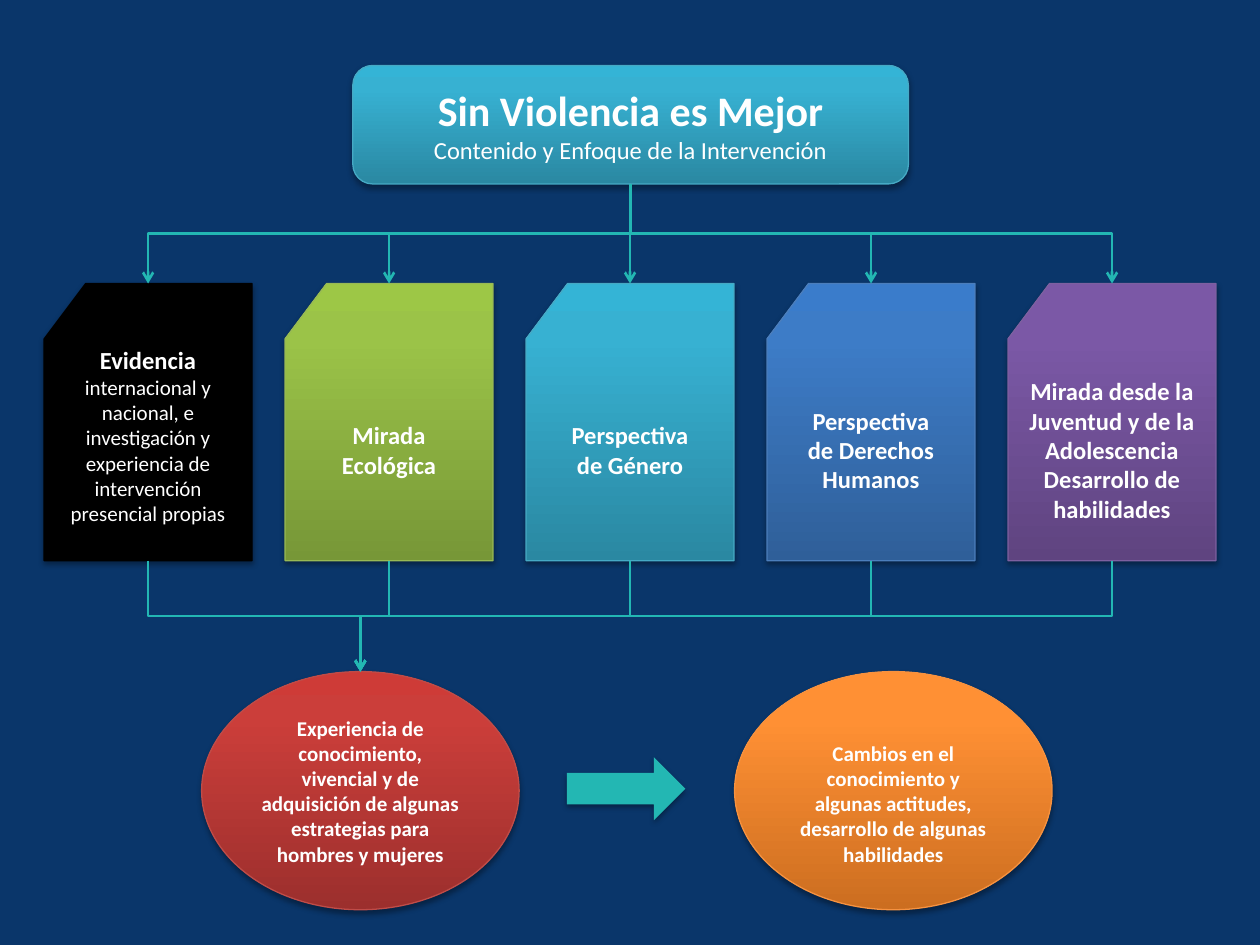
import pptx
import pptx.util
import pptx.dml.color
import pptx.enum.shapes
import pptx.enum.text
import pptx.oxml
import pptx.oxml.ns
import copy

Inches, Pt = pptx.util.Inches, pptx.util.Pt
RGB = pptx.dml.color.RGBColor.from_string
SHAPE = pptx.enum.shapes.MSO_SHAPE
ANCHOR = pptx.enum.text.MSO_ANCHOR
qn = pptx.oxml.ns.qn

# Gradients run from the bottom up: stops at 0, 80 and 100 percent, then the line colour
THEME = {
    "font": "Calibri", "title": 24, "heading": 14, "body": 12,
    "background": "0A366A", "text": "FFFFFF", "accent": "23B7B3",
    "black": ("000000", "000000", "000000", "000000"),
    "green": ("779737", "9BC348", "9DC746", "98B955"),
    "aqua": ("2A88A2", "37B1D2", "34B4D6", "46AAC5"),
    "blue": ("2F5F99", "3D7CC7", "3A7CCB", "4B7EBC"),
    "purple": ("5F4480", "7B58A6", "7C57A8", "7D60A0"),
    "red": ("9C2F2D", "CB3E3A", "CE3B37", "BF4C48"),
    "orange": ("CC6E20", "FF9034", "FF9136", "F69240"),
}
SHADOW = (
    f'<a:effectLst {pptx.oxml.ns.nsdecls("a")}>'
    '<a:outerShdw blurRad="40000" dist="23000" dir="5400000" rotWithShape="0">'
    '<a:srgbClr val="000000"><a:alpha val="35000"/></a:srgbClr>'
    '</a:outerShdw></a:effectLst>'
)


def add_block(kind, left, top, width, height, color, paragraphs):
    """Add a shaded shape; each paragraph is a list of (text, size, bold) runs."""
    shape = slide.shapes.add_shape(
        kind, Inches(left), Inches(top), Inches(width), Inches(height))
    palette = THEME[color]
    if color in ("black", "accent"):
        shape.fill.solid()
        shape.fill.fore_color.rgb = RGB(palette if color == "accent" else palette[0])
    else:
        shape.fill.gradient()
        shape.fill.gradient_angle = 90
        stop_list = shape._element.spPr.find(".//" + qn("a:gsLst"))
        stop_list.append(copy.deepcopy(stop_list[-1]))
        for stop, position, value in zip(shape.fill.gradient_stops, (0, 0.8, 1), palette):
            stop.position = position
            stop.color.rgb = RGB(value)
    if color == "accent":
        shape.line.fill.background()
    else:
        shape.line.color.rgb = RGB(palette[3])
        shape.line.width = Pt(0.75)
    shape._element.spPr.append(pptx.oxml.parse_xml(SHADOW))

    frame = shape.text_frame
    frame.word_wrap = True
    frame.vertical_anchor = ANCHOR.MIDDLE
    for index, runs in enumerate(paragraphs):
        paragraph = frame.add_paragraph() if index else frame.paragraphs[0]
        paragraph.alignment = pptx.enum.text.PP_ALIGN.CENTER
        if len(runs) == 1:
            paragraph.text = runs[0][0]
            fonts = [paragraph.font]
        else:
            fonts = []
            for text, size, bold in runs:
                run = paragraph.add_run()
                run.text = text
                fonts.append(run.font)
        for font, (text, size, bold) in zip(fonts, runs):
            font.name = THEME["font"]
            font.size = Pt(THEME[size])
            font.bold = bold
            font.color.rgb = RGB(THEME["text"])
    return shape


def connect_down(upper, lower):
    """Join the bottom of one shape to the top of another with a vertical elbow arrow."""
    connector = slide.shapes.add_connector(
        pptx.enum.shapes.MSO_CONNECTOR.ELBOW, 0, 0, 0, 0)
    connector.begin_connect(upper, 2)
    connector.end_connect(lower, 0)
    start_x, start_y = connector.begin_x, connector.begin_y
    end_x, end_y = connector.end_x, connector.end_y
    # The elbow is turned a quarter, so its width is the vertical distance
    connector.width, connector.height = end_y - start_y, abs(end_x - start_x)
    connector.left = (start_x + end_x - connector.width) // 2
    connector.top = (start_y + end_y - connector.height) // 2
    properties = connector._element.spPr
    transform = properties.find(qn("a:xfrm"))
    goes_right = end_x > start_x
    transform.set("rot", "16200000" if goes_right else "5400000")
    transform.set("flipH", "1" if goes_right else "0")
    transform.set("flipV", "0")
    connector.line.color.rgb = RGB(THEME["accent"])
    connector.line.width = Pt(1.5)
    arrowhead = pptx.oxml.parse_xml(
        f'<a:tailEnd {pptx.oxml.ns.nsdecls("a")} type="arrow"/>')
    properties.find(qn("a:ln")).append(arrowhead)
    properties.append(pptx.oxml.parse_xml(
        f'<a:effectLst {pptx.oxml.ns.nsdecls("a")}/>'))


presentation = pptx.Presentation()
presentation.slide_width, presentation.slide_height = Inches(10), Inches(7.5)
slide = presentation.slides.add_slide(presentation.slide_layouts[6])
slide.background.fill.solid()
slide.background.fill.fore_color.rgb = RGB(THEME["background"])

# Title
title = add_block(SHAPE.ROUNDED_RECTANGLE, 2.8, 0.52, 4.41, 0.94, "aqua", [
    [("Sin Violencia es Mejor", "title", True)],
    [("Contenido y Enfoque de la Intervención", "heading", False)],
])

# Row of five cards
card_contents = [
    ("black", [[("Evidencia ", "heading", True),
                ("internacional y nacional, e investigación y experiencia de "
                 "intervención presencial propias", "body", False)]]),
    ("green", [[("Mirada\nEcológica", "heading", True)]]),
    ("aqua", [[("Perspectiva\nde Género", "heading", True)]]),
    ("blue", [[("Perspectiva\nde Derechos Humanos", "heading", True)]]),
    ("purple", [[("Mirada desde la Juventud y de la Adolescencia", "heading", True)],
                [("Desarrollo de habilidades", "heading", True)]]),
]
first_left, last_left = 0.35, 8
pitch = (last_left - first_left) / (len(card_contents) - 1)
cards = [
    add_block(SHAPE.FLOWCHART_CARD, first_left + index * pitch, 2.25, 1.65, 2.2,
              color, paragraphs)
    for index, (color, paragraphs) in enumerate(card_contents)
]
cards[0].text_frame.vertical_anchor = ANCHOR.TOP

# Outcomes
experience = add_block(SHAPE.OVAL, 1.6, 5.33, 2.52, 1.89, "red", [
    [("Experiencia de conocimiento, vivencial y de adquisición de algunas "
      "estrategias para hombres y mujeres", "body", True)],
])
add_block(SHAPE.RIGHT_ARROW, 4.5, 6.01, 0.94, 0.5, "accent", [])
changes = add_block(SHAPE.OVAL, 5.83, 5.33, 2.52, 1.89, "orange", [
    [("Cambios en el conocimiento y algunas actitudes, desarrollo de algunas "
      "habilidades", "body", True)],
])
changes.text_frame.margin_top = Inches(0.25)

# Connectors
for card in cards:
    connect_down(title, card)
for card in cards:
    connect_down(card, experience)

presentation.save("out.pptx")
